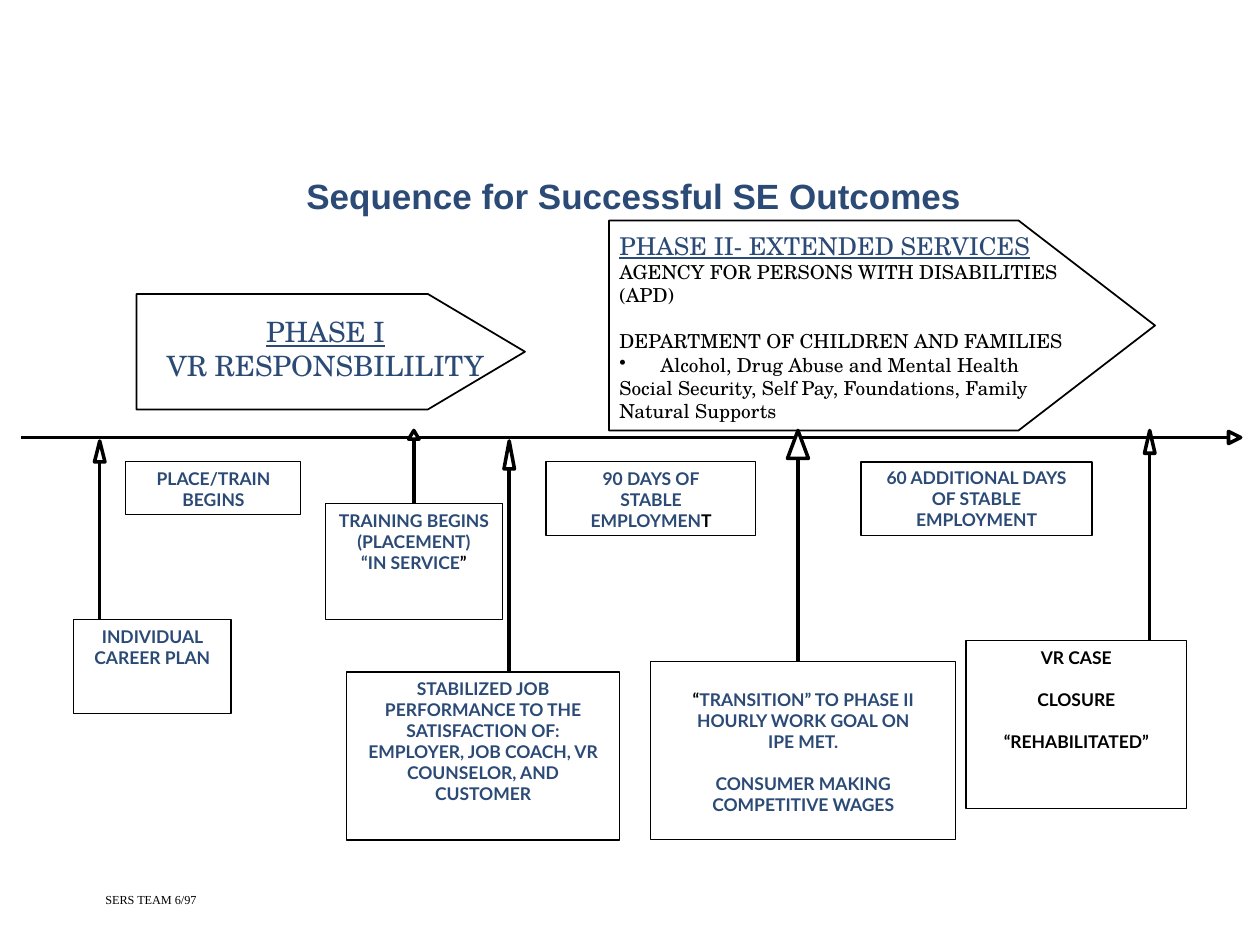
from lxml import etree
from pptx import Presentation
from pptx.dml.color import RGBColor
from pptx.enum import shapes, text
from pptx.oxml import ns
from pptx.util import Pt

NAVY = RGBColor(0x2B, 0x4A, 0x76)
BLACK = RGBColor(0, 0, 0)
WHITE = RGBColor(255, 255, 255)
SERIF = "TeX Gyre Schola"
CENTER = text.PP_ALIGN.CENTER


def write(frame, content, size=10, font="Lato", color=NAVY, bold=False,
          underline=False, align=CENTER, before=0, bullet_indent=0):
    first = frame.paragraphs[0]
    paragraph = frame.add_paragraph() if first.runs else first
    if bullet_indent:
        props = paragraph._p.get_or_add_pPr()
        props.set("marL", str(Pt(bullet_indent)))
        props.set("indent", str(-Pt(bullet_indent)))
        etree.SubElement(props, ns.qn("a:buChar")).set("char", "•")
    paragraph.alignment = align
    if before:
        paragraph.space_before = Pt(before)
    parts = [(content, color)] if isinstance(content, str) else content
    for words, tint in parts:
        run = paragraph.add_run()
        run.text = words
        run.font.size = Pt(size)
        run.font.name = font
        run.font.bold = bold
        run.font.underline = underline
        run.font.color.rgb = tint


def text_area(slide, left, top, width, height, inset=True, wrap=True):
    area = slide.shapes.add_textbox(Pt(left), Pt(top), Pt(width), Pt(height))
    frame = area.text_frame
    frame.word_wrap = wrap
    if not inset:
        frame.margin_left = frame.margin_right = 0
        frame.margin_top = frame.margin_bottom = 0
    return frame


def outline(slide, preset, left, top, width, height, weight):
    shape = slide.shapes.add_shape(preset, Pt(left), Pt(top), Pt(width), Pt(height))
    shape.shadow.inherit = False
    shape.fill.background()
    shape.line.color.rgb = BLACK
    shape.line.width = Pt(weight)
    return shape


def step_box(slide, left, top, width, height, lines, weight=0.63, top_gap=0,
             anchor=text.MSO_ANCHOR.TOP, wrap=True):
    box = outline(slide, shapes.MSO_SHAPE.RECTANGLE, left, top, width, height, weight)
    frame = box.text_frame
    frame.word_wrap = wrap
    frame.vertical_anchor = anchor
    frame.margin_top = Pt(3.6 + top_gap)
    for content, before in lines:
        write(frame, content, bold=True, before=before)
    return box


def phase_arrow(slide, left, top, width, height, point, label_width, inset, lines):
    frame = text_area(slide, left + inset[0], top + inset[1], label_width,
                      height - 2 * inset[1], inset=False)
    for content, style in lines:
        write(frame, content, font=SERIF, **style)
    pentagon = outline(slide, shapes.MSO_SHAPE.PENTAGON, left, top, width, height, 1)
    pentagon.adjustments[0] = point


def shaft(slide, x1, y1, x2, y2):
    line = slide.shapes.add_connector(shapes.MSO_CONNECTOR.STRAIGHT,
                                      Pt(x1), Pt(y1), Pt(x2), Pt(y2))
    line.line.color.rgb = BLACK
    line.line.width = Pt(2)
    etree.SubElement(line._element.spPr, ns.qn("a:effectLst"))
    return line


def arrowhead(slide, corners):
    start, *others = [(Pt(x), Pt(y)) for x, y in corners]
    builder = slide.shapes.build_freeform(*start, scale=1.0)
    builder.add_line_segments(others, close=True)
    head = builder.convert_to_shape()
    head.shadow.inherit = False
    head.fill.solid()
    head.fill.fore_color.rgb = WHITE
    head.line.color.rgb = BLACK
    head.line.width = Pt(2)


def timeline(slide, left, middle, right, head=7):
    base = right - head
    shaft(slide, left, middle, base, middle)
    arrowhead(slide, [(base, middle + head / 2), (right, middle), (base, middle - head / 2)])


def milestone(slide, x, bottom, tip, head_width, head_height):
    base = tip + head_height
    line = shaft(slide, x, bottom, x, base)
    arrowhead(slide, [(x + head_width / 2, base), (x, tip), (x - head_width / 2, base)])
    return line


def phases(slide):
    heading = dict(size=16)
    phase_arrow(slide, 78, 168, 222, 66, 0.841, 192, (12, 12), [
        ("PHASE I", dict(heading, underline=True)),
        ("VR RESPONSBILILITY", heading),
    ])
    left = text.PP_ALIGN.LEFT
    body = dict(size=11, color=BLACK, align=left)
    phase_arrow(slide, 348, 126, 312, 120, 0.65, 294, (6, 6), [
        ("PHASE II- EXTENDED SERVICES", dict(size=14, underline=True, align=left)),
        ("AGENCY FOR PERSONS WITH DISABILITIES", body),
        ("(APD)", body),
        ("DEPARTMENT OF CHILDREN AND FAMILIES", dict(body, before=13.2)),
        ("Alcohol, Drug Abuse and Mental Health", dict(body, bullet_indent=23.4)),
        ("Social Security, Self Pay, Foundations, Family", body),
        ("Natural Supports", body),
    ])


def steps(slide):
    step_box(slide, 72, 264, 100, 30, [("PLACE/TRAIN", 0), ("BEGINS", 0)])
    training = step_box(slide, 186, 288, 101, 66, [
        ("TRAINING BEGINS", 0), ("(PLACEMENT)", 0),
        ([("“IN SERVICE", NAVY), ("”", BLACK)], 0)])
    step_box(slide, 312, 264, 120, 42, [
        ("90 DAYS OF", 0), ("STABLE", 0),
        ([("EMPLOYMEN", NAVY), ("T", BLACK)], 0)])
    step_box(slide, 198, 384, 156, 96, [
        ("STABILIZED JOB", 0),
        ("PERFORMANCE TO THE SATISFACTION OF: EMPLOYER, JOB COACH, "
         "VR COUNSELOR, AND CUSTOMER", 0)])
    step_box(slide, 372, 378, 174, 102, [
        ([("“", BLACK), ("TRANSITION” TO PHASE II", NAVY)], 0),
        ("HOURLY WORK GOAL ON", 0), ("IPE MET.", 0),
        ("CONSUMER MAKING", 12), ("COMPETITIVE WAGES", 0)], top_gap=12)
    step_box(slide, 552, 366, 126, 96, [
        ([("VR CASE", BLACK)], 0), ([("CLOSURE", BLACK)], 12),
        ([("“REHABILITATED”", BLACK)], 12)])
    step_box(slide, 492, 264, 132, 42, [
        ("60 ADDITIONAL DAYS", 0), ("OF STABLE", 0), ("EMPLOYMENT", 0)],
        weight=1, anchor=text.MSO_ANCHOR.MIDDLE, wrap=False)
    step_box(slide, 42, 354, 90, 54, [("INDIVIDUAL CAREER PLAN", 0)])

    milestone(slide, 236.5, 288, 246, 6, 5).begin_connect(training, 0)
    for x, bottom, tip, head_width, head_height in [
            (57, 354, 252, 6, 12), (291, 384, 252, 6, 16),
            (456, 378, 246, 12, 16), (657, 366, 246, 6, 13)]:
        milestone(slide, x, bottom, tip, head_width, head_height)


def main():
    deck = Presentation()
    deck.slide_width, deck.slide_height = Pt(720), Pt(540)
    slide = deck.slides.add_slide(deck.slide_layouts[6])
    timeline(slide, 12, 250, 709)
    phases(slide)
    steps(slide)
    write(text_area(slide, 168, 96, 510, 31), "Sequence for Successful SE Outcomes",
          size=20, font="Arial", bold=True, align=text.PP_ALIGN.LEFT)
    write(text_area(slide, 60, 510, 52.5, 9, inset=False, wrap=False), "SERS TEAM 6/97",
          size=7, font="Times New Roman", color=BLACK)
    deck.save("out.pptx")


if __name__ == "__main__":
    main()
